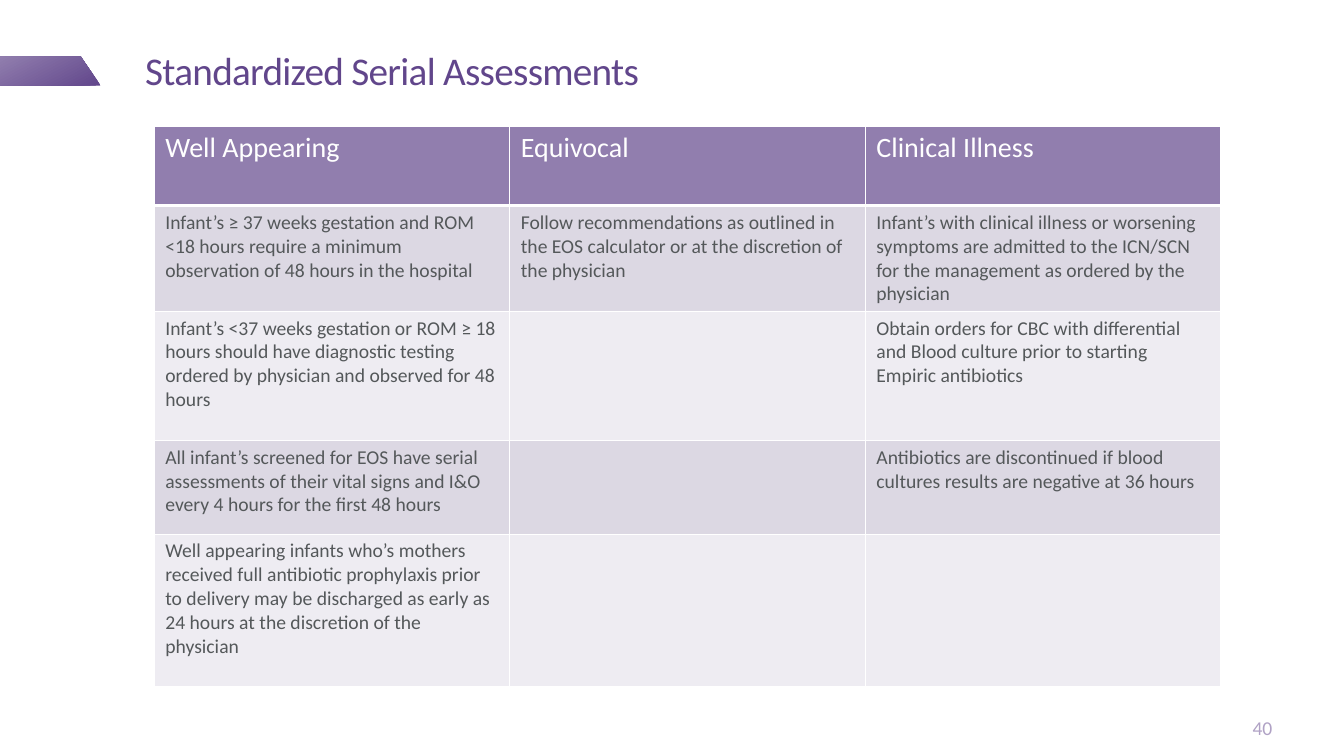
import pptx
import pptx.util
import pptx.dml.color
import pptx.enum.text
import pptx.oxml
import pptx.oxml.ns
from dataclasses import dataclass

Inches = pptx.util.Inches
Align = pptx.enum.text.PP_ALIGN
Anchor = pptx.enum.text.MSO_ANCHOR


@dataclass(frozen=True)
class Theme:
    font: str = "Calibri"
    dark: str = "61468B"
    mid: str = "917EAE"
    pale: str = "B0A2C5"
    ink: str = "54585A"
    white: str = "FFFFFF"
    bands: tuple = ("DCD8E3", "EEECF2")
    title: int = 28
    head: int = 20
    body: int = 14


HEADS = ["Well Appearing", "Equivocal", "Clinical Illness"]
ROWS = [
    ["Infant’s ≥ 37 weeks gestation and ROM <18 hours require a minimum "
     "observation of 48 hours in the hospital",
     "Follow recommendations as outlined in the EOS calculator or at the "
     "discretion of the physician",
     "Infant’s with clinical illness or worsening symptoms are admitted to "
     "the ICN/SCN for the management as ordered by the physician"],
    ["Infant’s <37 weeks gestation or ROM ≥ 18 hours should have diagnostic "
     "testing ordered by physician and observed for 48 hours",
     "",
     "Obtain orders for CBC with differential and Blood culture prior to "
     "starting Empiric antibiotics"],
    ["All infant’s screened for EOS have serial assessments of their vital "
     "signs and I&O every 4 hours for the first 48 hours",
     "",
     "Antibiotics are discontinued if blood cultures results are negative "
     "at 36 hours"],
    ["Well appearing infants who’s mothers received full antibiotic "
     "prophylaxis prior to delivery may be discharged as early as 24 hours "
     "at the discretion of the physician",
     "", ""],
]
HEIGHTS = [0.79, 1.05, 1.28, 0.93, 1.51]


def rgb(code):
    return pptx.dml.color.RGBColor.from_string(code)


class Page:
    def __init__(self, slide, theme):
        self.slide = slide
        self.theme = theme

    def add_text(self, para, text, size, color):
        run = para.add_run()
        run.text = text
        font = run.font
        font.name = self.theme.font
        font.size = pptx.util.Pt(size)
        font.bold = False
        font.color.rgb = rgb(color)
        return run

    def label(self, box, text, size, color, align=Align.LEFT, pads=(0, 0, 0, 0)):
        """Add bottom-anchored text; pads run left, top, right, bottom."""
        shape = self.slide.shapes.add_textbox(*map(Inches, box))
        frame = shape.text_frame
        frame.word_wrap = True
        frame.vertical_anchor = Anchor.BOTTOM
        (frame.margin_left, frame.margin_top,
         frame.margin_right, frame.margin_bottom) = map(Inches, pads)
        para = frame.paragraphs[0]
        para.alignment = align
        return para, self.add_text(para, text, size, color)

    def title(self, text):
        para, run = self.label((1.44, 0.15, 11.25, 0.83), text, self.theme.title,
                               self.theme.dark, pads=(0, 0, 0.1, 0.05))
        para.line_spacing = 0.85
        run.font._element.set("spc", "-50")

    def number(self, text):
        self.label((12.11, 7.09, 0.51, 0.25), text, self.theme.body,
                   self.theme.pale, Align.RIGHT)

    def tab(self, points):
        """Draw the slanted gradient tab at the slide's left edge."""
        start, *rest = [(Inches(x), Inches(y)) for x, y in points]
        build = self.slide.shapes.build_freeform(*start)
        build.add_line_segments(rest, close=True)
        shape = build.convert_to_shape()
        shape.shadow.inherit = False
        shape.line.fill.background()
        shape.fill.gradient()
        shape.fill.gradient_angle = 118
        for stop, color in zip(shape.fill.gradient_stops,
                               (self.theme.dark, self.theme.mid)):
            stop.color.rgb = rgb(color)

    def border(self, cell, base):
        """Rule all four sides at one point, with the bottom at base points."""
        props = cell._tc.get_or_add_tcPr()
        for side, width in zip("LRTB", (1, 1, 1, base)):
            props.append(pptx.oxml.parse_xml(
                f'<a:ln{side} {pptx.oxml.ns.nsdecls("a")} '
                f'w="{pptx.util.Pt(width)}"><a:solidFill>'
                f'<a:srgbClr val="{self.theme.white}"/>'
                f'</a:solidFill></a:ln{side}>'))

    def cell(self, cell, text, size, color, fill, base=1):
        self.border(cell, base)
        cell.fill.solid()
        cell.fill.fore_color.rgb = rgb(fill)
        cell.margin_left = cell.margin_right = Inches(0.11)
        cell.margin_top = cell.margin_bottom = Inches(0.05)
        if text:
            self.add_text(cell.text_frame.paragraphs[0], text, size, color)

    def table(self, left, top, width, heads, rows, heights):
        theme = self.theme
        frame = self.slide.shapes.add_table(
            len(heights), len(heads), Inches(left), Inches(top),
            Inches(width), Inches(sum(heights)))
        grid = frame.table
        for row, height in zip(grid.rows, heights):
            row.height = Inches(height)
        for col, text in enumerate(heads):
            self.cell(grid.cell(0, col), text, theme.head, theme.white,
                      theme.mid, base=3)
        for row, texts in enumerate(rows):
            for col, text in enumerate(texts):
                self.cell(grid.cell(row + 1, col), text, theme.body, theme.ink,
                          theme.bands[row % 2])


def main():
    deck = pptx.Presentation()
    deck.slide_width = Inches(13.33)
    deck.slide_height = Inches(7.5)
    page = Page(deck.slides.add_slide(deck.slide_layouts[6]), Theme())
    page.tab([(0, 0.56), (0.8, 0.56), (1, 0.85), (0, 0.85)])
    page.title("Standardized Serial Assessments")
    page.number("40")
    page.table(1.53, 1.25, 10.58, HEADS, ROWS, HEIGHTS)
    deck.save("out.pptx")


if __name__ == "__main__":
    main()
